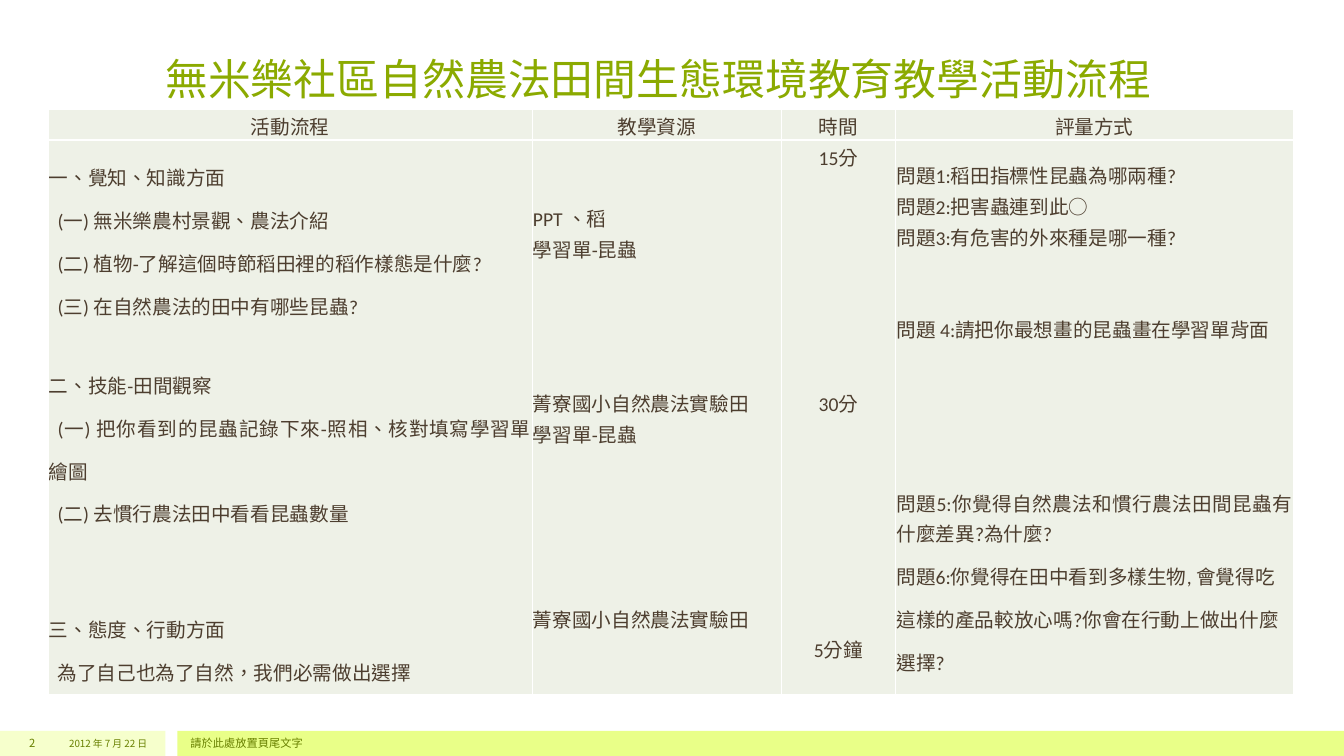
from lxml.etree import SubElement
from pptx import Presentation
from pptx.dml.color import RGBColor
from pptx.enum.shapes import MSO_SHAPE
from pptx.enum.text import MSO_ANCHOR, PP_ALIGN
from pptx.oxml.ns import qn
from pptx.util import Cm, Pt

WHITE = RGBColor(0xFF, 0xFF, 0xFF)
TITLE_GREEN = RGBColor(0x8B, 0xAA, 0x00)
FOOTER_GREEN = RGBColor(0x68, 0x80, 0x00)
PALE_LIME = RGBColor(0xF6, 0xFF, 0xCC)
LIME = RGBColor(0xE9, 0xFF, 0x88)
BROWN = RGBColor(0x4D, 0x3E, 0x2F)
CELL_GREY = RGBColor(0xEE, 0xF1, 0xE7)

CHINESE_FONT = "Noto Sans CJK TC"
TABLE_FONT = "Calibri"
ROW_PITCH = Pt(22)

# Paragraph formats used in the table
CENTER = {"alignment": PP_ALIGN.CENTER, "line_spacing": ROW_PITCH}
TIGHT = {"alignment": PP_ALIGN.JUSTIFY, "line_spacing": ROW_PITCH}
LOOSE = {"alignment": PP_ALIGN.JUSTIFY, "line_spacing": 1.5}
LOOSE_LEFT = {"alignment": PP_ALIGN.LEFT, "line_spacing": 1.5}
INDENTED = {**LOOSE, "indent": Cm(0.22)}


def after_gap(style, points):
    return {**style, "space_before": Pt(points)}


HEADINGS = ["活動流程", "教學資源", "時間", "評量方式"]
COLUMN_WIDTHS = [12.2, 6.28, 2.88, 10.02]
ROW_HEIGHTS = [0.78, 13.97]

ACTIVITIES = [
    ("一、覺知、知識方面", LOOSE),
    ("(一) 無米樂農村景觀、農法介紹", INDENTED),
    ("(二) 植物-了解這個時節稻田裡的稻作樣態是什麼?", INDENTED),
    ("(三) 在自然農法的田中有哪些昆蟲?", INDENTED),
    ("二、技能-田間觀察", after_gap(LOOSE, 26)),
    ("(一) 把你看到的昆蟲記錄下來-照相、核對填寫學習單、繪圖", INDENTED),
    ("(二) 去慣行農法田中看看昆蟲數量", INDENTED),
    ("三、態度、行動方面", after_gap(LOOSE, 52)),
    ("為了自己也為了自然，我們必需做出選擇", INDENTED),
]
RESOURCES = [
    ("PPT 、稻", TIGHT),
    ("學習單-昆蟲", TIGHT),
    ("菁寮國小自然農法實驗田", after_gap(TIGHT, 88)),
    ("學習單-昆蟲", TIGHT),
    ("菁寮國小自然農法實驗田", after_gap(TIGHT, 110)),
]
TIMES = [
    ("15分", CENTER),
    ("30分", after_gap(CENTER, 154)),
    ("5分鐘", after_gap(CENTER, 154)),
]
ASSESSMENT = [
    ("問題1:稻田指標性昆蟲為哪兩種?", TIGHT),
    ("問題2:把害蟲連到此○", TIGHT),
    ("問題3:有危害的外來種是哪一種?", TIGHT),
    ("問題 4:請把你最想畫的昆蟲畫在學習單背面", after_gap(TIGHT, 44)),
    ("問題5:你覺得自然農法和慣行農法田間昆蟲有什麼差異?為什麼?", after_gap(TIGHT, 102)),
    ("問題6:你覺得在田中看到多樣生物, 會覺得吃這樣的產品較放心嗎?你會在行動上做出什麼選擇?", LOOSE_LEFT),
]


class SlideBuilder:
    def __init__(self, slide):
        self.slide = slide

    def fill_text(self, frame, lines, size, color, font=CHINESE_FONT):
        """Fill a text frame with (text, paragraph format) pairs."""
        for number, (text, style) in enumerate(lines):
            para = frame.paragraphs[0] if number == 0 else frame.add_paragraph()
            for name, value in style.items():
                if name == "indent":
                    para._p.get_or_add_pPr().set("indent", str(value))
                else:
                    setattr(para, name, value)
            span = para.add_run()
            span.text = text
            for name, value in {"name": font, "size": Pt(size), "bold": False}.items():
                setattr(span.font, name, value)
            span.font.color.rgb = color
            properties = span._r.get_or_add_rPr()
            properties.set("lang", "zh-TW")
            SubElement(properties, qn("a:ea")).set("typeface", CHINESE_FONT)

    def title(self, text, left, top, width, height):
        box = self.slide.shapes.title
        place = {"left": left, "top": top, "width": width, "height": height}
        for name, value in place.items():
            setattr(box, name, Cm(value))
        box.text_frame.vertical_anchor = MSO_ANCHOR.BOTTOM
        self.fill_text(box.text_frame, [(text, {"alignment": PP_ALIGN.LEFT})], 30.6, TITLE_GREEN)

    def band(self, left, top, width, height, color):
        bar = self.slide.shapes.add_shape(
            MSO_SHAPE.RECTANGLE, Cm(left), Cm(top), Cm(width), Cm(height))
        bar.shadow.inherit = False
        bar.fill.solid()
        bar.fill.fore_color.rgb = color
        bar.line.fill.background()

    def label(self, text, left, top, width, height, size, alignment):
        box = self.slide.shapes.add_textbox(Cm(left), Cm(top), Cm(width), Cm(height))
        frame = box.text_frame
        frame.word_wrap = True
        frame.vertical_anchor = MSO_ANCHOR.MIDDLE
        self.fill_text(frame, [(text, {"alignment": alignment})], size, FOOTER_GREEN)

    def cell(self, cell, lines, anchor):
        style = {"margin_left": Cm(0.02), "margin_right": Cm(0.02), "margin_top": 0,
                 "margin_bottom": 0, "vertical_anchor": anchor}
        for name, value in style.items():
            setattr(cell, name, value)
        properties = cell._tc.get_or_add_tcPr()
        for side in ("a:lnL", "a:lnR", "a:lnT", "a:lnB"):
            line = SubElement(properties, qn(side), w=str(Pt(1)))
            fill = SubElement(line, qn("a:solidFill"))
            SubElement(fill, qn("a:srgbClr"), val=str(WHITE))
        cell.fill.solid()
        cell.fill.fore_color.rgb = CELL_GREY
        self.fill_text(cell.text_frame, lines, 14, BROWN, TABLE_FONT)

    def table(self, left, top, widths, heights, rows):
        table = self.slide.shapes.add_table(
            len(heights), len(widths), Cm(left), Cm(top),
            Cm(sum(widths)), Cm(sum(heights))).table
        table.first_row = table.horz_banding = False
        for column, width in zip(table.columns, widths):
            column.width = Cm(width)
        for row, height in zip(table.rows, heights):
            row.height = Cm(height)
        for row, contents in zip(table.rows, rows):
            for cell, (lines, anchor) in zip(row.cells, contents):
                self.cell(cell, lines, anchor)


def main():
    deck = Presentation()
    deck.slide_width, deck.slide_height = Cm(33.87), Cm(19.05)
    page = SlideBuilder(deck.slides.add_slide(deck.slide_layouts[5]))

    # Footer bands
    footer_top, footer_height = 18.42, 0.63
    page.band(0, footer_top, 4.17, footer_height, PALE_LIME)
    page.band(4.47, footer_top, 29.4, footer_height, LIME)

    # Title
    page.title("無米樂社區自然農法田間生態環境教育教學活動流程", 3.91, 0.76, 26.04, 1.98)

    # Lesson plan table
    middle, top = MSO_ANCHOR.MIDDLE, MSO_ANCHOR.TOP
    header = [([(text, CENTER)], middle) for text in HEADINGS]
    body = [(ACTIVITIES, middle), (RESOURCES, middle), (TIMES, top), (ASSESSMENT, middle)]
    page.table(1.21, 2.75, COLUMN_WIDTHS, ROW_HEIGHTS, [header, body])

    # Footer texts
    for text, left, width, size, alignment in [
        ("2012 年 7 月 22 日", 1.19, 2.77, 7, PP_ALIGN.RIGHT),
        ("請於此處放置頁尾文字", 4.55, 25.4, 8, PP_ALIGN.LEFT),
        ("2", 0, 1.14, 8, PP_ALIGN.RIGHT),
    ]:
        page.label(text, left, footer_top, width, footer_height, size, alignment)

    deck.save("out.pptx")


if __name__ == "__main__":
    main()
